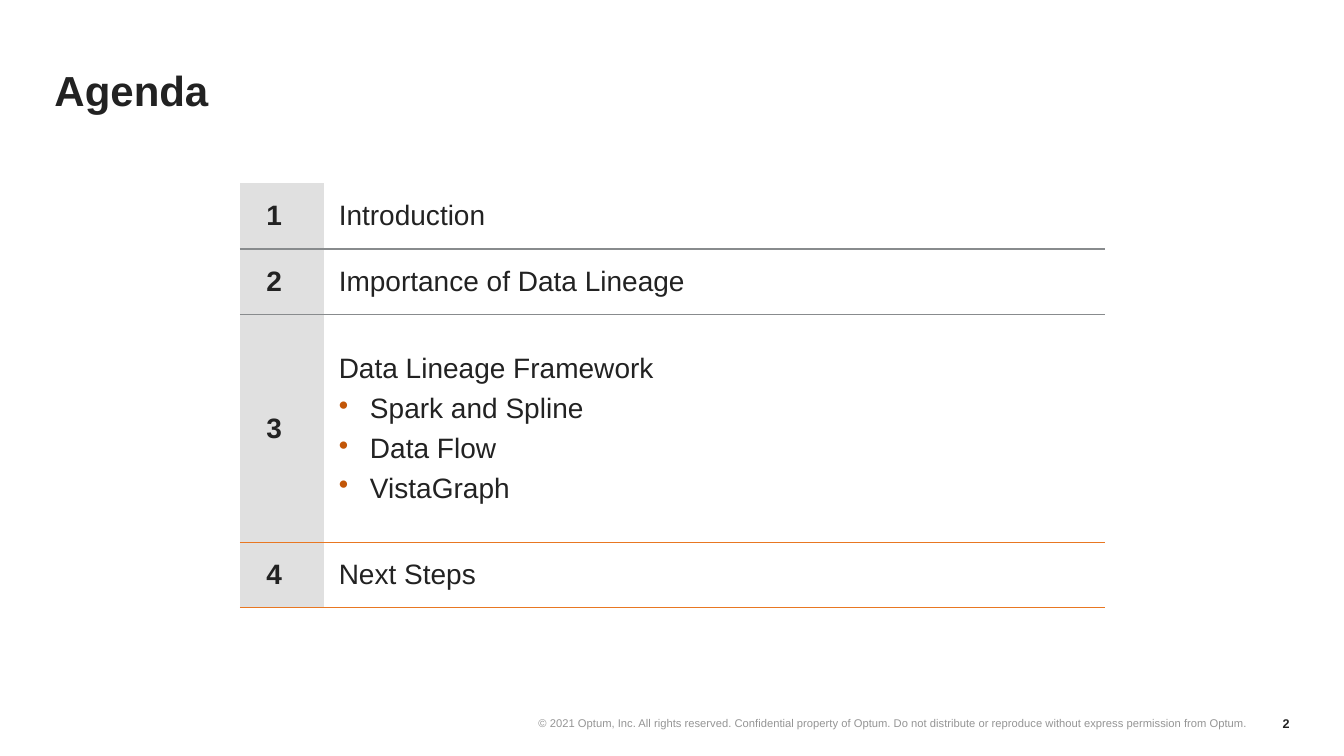
from lxml.etree import SubElement
from pptx import Presentation
from pptx.dml.color import RGBColor
from pptx.enum.text import MSO_ANCHOR, PP_ALIGN
from pptx.oxml import parse_xml
from pptx.oxml.ns import nsdecls, qn
from pptx.util import Inches, Pt

INK, GREY, PALE = "222222", "959595", "E0E0E0"
ORANGE, RUST, RULE = "E87722", "C25608", "888B8D"
NO_GRID = "{2D5ABB26-0587-4C30-8999-92F81FD0307C}"


def rgb(color):
    return RGBColor.from_string(color)


class AgendaSlide:
    font = "Arial"

    def __init__(self, prs):
        self.slide = prs.slides.add_slide(prs.slide_layouts[5])

    def style(self, p, size, color=INK, bold=False, align=PP_ALIGN.LEFT):
        p.alignment = align
        for r in p.runs:
            r.font.name, r.font.size, r.font.bold = self.font, Pt(size), bold
            r.font.color.rgb = rgb(color)

    def frame(self, sp, box, anchor):
        sp.left, sp.top, sp.width, sp.height = (Inches(v) for v in box)
        tf = sp.text_frame
        tf.margin_left = tf.margin_right = tf.margin_top = tf.margin_bottom = 0
        tf.vertical_anchor, tf.word_wrap = anchor, True
        return tf

    def title(self, text, box):
        tf = self.frame(self.slide.shapes.title, box, MSO_ANCHOR.BOTTOM)
        tf.text = text
        p = tf.paragraphs[0]
        p.line_spacing = 0.9
        self.style(p, 30, bold=True)

    def footer(self, text, box, size, color, bold=False):
        sp = self.slide.shapes.add_textbox(0, 0, 0, 0)
        tf = self.frame(sp, box, MSO_ANCHOR.MIDDLE)
        tf.text = text
        self.style(tf.paragraphs[0], size, color, bold, PP_ALIGN.RIGHT)

    def bullet(self, p):
        pPr = p._p.get_or_add_pPr()
        pPr.set("marL", str(Inches(0.31)))
        pPr.set("indent", str(-Inches(0.31)))
        p.line_spacing = 1.1
        p.space_after = Pt(4)
        clr = SubElement(pPr, qn("a:buClr"))
        SubElement(clr, qn("a:srgbClr")).set("val", RUST)
        SubElement(pPr, qn("a:buChar")).set("char", "•")

    def cell(self, cell, lines, rule, left=0, right=0, fill=None,
             bold=False, align=PP_ALIGN.LEFT):
        cell.margin_left, cell.margin_right = Inches(left), Inches(right)
        cell.margin_top = cell.margin_bottom = 0
        cell.vertical_anchor = MSO_ANCHOR.MIDDLE
        if fill:
            cell.fill.solid()
            cell.fill.fore_color.rgb = rgb(fill)
        else:
            cell.fill.background()
        cell._tc.get_or_add_tcPr().insert(0, parse_xml(
            f'<a:lnB {nsdecls("a")} w="{Pt(1)}"><a:solidFill>'
            f'<a:srgbClr val="{rule}"/></a:solidFill></a:lnB>'))
        tf = cell.text_frame
        tf.text = "\n".join(lines)
        for i, p in enumerate(tf.paragraphs):
            if i:
                self.bullet(p)
            elif len(lines) > 1:
                p.space_after = Pt(4)
            self.style(p, 20, bold=bold, align=align)

    def agenda(self, items, box, widths, heights, rules):
        table = self.slide.shapes.add_table(
            len(items), 2, *(Inches(v) for v in box)).table
        table.first_row = table.horz_banding = False
        table._tbl.tblPr.find(qn("a:tableStyleId")).text = NO_GRID
        for column, width in zip(table.columns, widths):
            column.width = Inches(width)
        for i, (lines, height, rule) in enumerate(zip(items, heights, rules)):
            table.rows[i].height = Inches(height)
            self.cell(table.cell(i, 0), [str(i + 1)], rule, right=0.15,
                      fill=PALE, bold=True, align=PP_ALIGN.CENTER)
            self.cell(table.cell(i, 1), lines, rule, left=0.15)


def main():
    prs = Presentation()
    prs.slide_width, prs.slide_height = Inches(13.33), Inches(7.5)
    s = AgendaSlide(prs)

    # Title
    s.title("Agenda", (0.54, 0.7, 12.25, 0.45))

    # Numbered agenda
    items = [
        ["Introduction"],
        ["Importance of Data Lineage"],
        ["Data Lineage Framework", "Spark and Spline", "Data Flow", "VistaGraph"],
        ["Next Steps"],
    ]
    s.agenda(items, (2.38, 1.82, 8.58, 4.21), (0.83, 7.75),
             (0.65, 0.65, 2.26, 0.65), (RULE, RULE, ORANGE, ORANGE))

    # Footer
    s.footer("© 2021 Optum, Inc. All rights reserved. Confidential property of "
             "Optum. Do not distribute or reproduce without express permission "
             "from Optum.", (4.38, 7.11, 8, 0.13), 8, GREY)
    s.footer("2", (12.41, 7.1, 0.38, 0.15), 9, INK, bold=True)

    prs.save("out.pptx")


if __name__ == "__main__":
    main()
